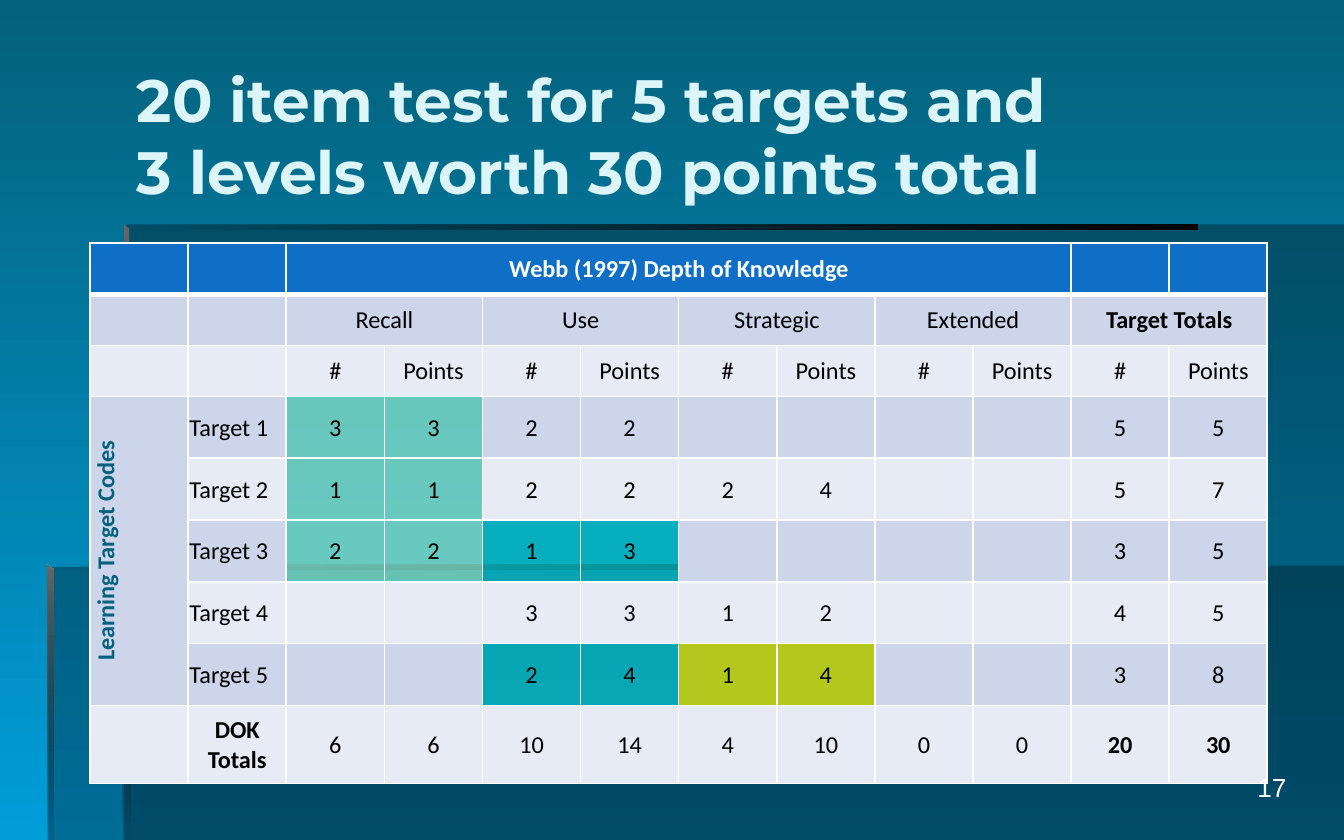
"""Build a test blueprint slide: a depth of knowledge table over stepped panels."""
import pptx
import pptx.dml.color
import pptx.enum.text
import pptx.oxml
import pptx.util
from pptx.util import Inches

RGBColor = pptx.dml.color.RGBColor
Align = pptx.enum.text.PP_ALIGN
Anchor = pptx.enum.text.MSO_ANCHOR

DEEP_TEAL = RGBColor(0x04, 0x61, 0x7B)
SKY = RGBColor(0x00, 0x9D, 0xD9)
ICE = RGBColor(0xDB, 0xF5, 0xF9)
BLACK = RGBColor(0x00, 0x00, 0x00)
GREY = RGBColor(0x66, 0x66, 0x66)
WHITE = RGBColor(0xFF, 0xFF, 0xFF)
HEADER_BLUE = RGBColor(0x0F, 0x6F, 0xC6)
BANDS = (RGBColor(0xE7, 0xEB, 0xF5), RGBColor(0xCC, 0xD5, 0xEA))
MINT = RGBColor(0x94, 0xF7, 0xDC)
TURQUOISE = RGBColor(0x0B, 0xD0, 0xD9)
YELLOW = RGBColor(0xFF, 0xFF, 0x00)

PANELS = [
    [(0.92, 4.21), (0.92, 6.25), (10, 6.25), (10, 4.21)],
    [(0.94, 4.22), (0.36, 4.22), (0.36, 6.25), (10, 6.25), (10, 1.67), (0.94, 1.67)],
]
EDGES = [
    ([(0.92, 1.67), (0.92, 1.71), (8.91, 1.71), (8.91, 1.67)], (BLACK, BLACK), (0, 100), 0),
    ([(0.92, 1.67), (0.92, 4.25), (0.97, 4.25), (0.96, 1.7)], (GREY, BLACK), (100, 100), 270),
    ([(0.91, 6.25), (0.97, 6.25), (0.96, 4.24), (0.91, 4.2)], (GREY, BLACK), (100, 0), 270),
    ([(0.35, 4.2), (0.35, 4.24), (5.35, 4.24), (5.35, 4.2)], (BLACK, BLACK), (0, 100), 0),
    ([(0.35, 4.2), (0.35, 6.25), (0.4, 6.25), (0.4, 4.24)], (GREY, BLACK), (100, 10), 270),
]
ROWS = [
    ["", "", "Webb (1997) Depth of Knowledge"] + [""] * 9,
    ["", "", "Recall", "", "Use", "", "Strategic", "", "Extended", "", "Target Totals", ""],
    ["", ""] + ["#", "Points"] * 5,
    ["Learning Target Codes", "Target 1", "3", "3", "2", "2", "", "", "", "", "5", "5"],
    ["", "Target 2", "1", "1", "2", "2", "2", "4", "", "", "5", "7"],
    ["", "Target 3", "2", "2", "1", "3", "", "", "", "", "3", "5"],
    ["", "Target 4", "", "", "3", "3", "1", "2", "", "", "4", "5"],
    ["", "Target 5", "", "", "2", "4", "1", "4", "", "", "3", "8"],
    ["", "DOK\nTotals", "6", "6", "10", "14", "4", "10", "0", "0", "20", "30"],
]
ROW_HEIGHTS = [0.38] * 3 + [0.46] * 5 + [0.58]
COLUMN_WIDTH = 0.73
MERGES = [((0, 2), (0, 9)), ((3, 0), (7, 0))]
MERGES += [((1, column), (1, column + 1)) for column in range(2, 12, 2)]
BOLD_TEXTS = {ROWS[0][2], "Target Totals", "Learning Target Codes", "DOK\nTotals", "20", "30"}
HIGHLIGHTED_PAIRS = {
    (3, 2): MINT, (4, 2): MINT, (5, 2): MINT,
    (5, 4): TURQUOISE, (7, 4): TURQUOISE, (7, 6): YELLOW,
}


def set_opacity(properties, *percentages):
    """Give the fill colours of an element their opacities."""
    colors = properties.xpath("./a:solidFill/a:srgbClr | ./a:gradFill//a:srgbClr")
    for color, percentage in zip(colors, percentages):
        alpha = color.makeelement(pptx.oxml.ns.qn("a:alpha"), {"val": str(percentage * 1000)})
        color.append(alpha)


def fill_gradient(fill, colors, angle):
    """Fill with a linear two-colour gradient."""
    fill.gradient()
    fill.gradient_angle = angle
    for stop, color in zip(fill.gradient_stops, colors):
        stop.color.rgb = color


def add_outline(slide, points):
    """Add a closed freeform without line or shadow."""
    corners = [(Inches(x), Inches(y)) for x, y in points]
    builder = slide.shapes.build_freeform(*corners[0], scale=1.0)
    builder.add_line_segments(corners[1:], close=True)
    shape = builder.convert_to_shape()
    shape.shadow.inherit = False
    shape.line.fill.background()
    return shape


def add_panel(slide, points):
    """Add a translucent dark panel."""
    shape = add_outline(slide, points)
    shape.fill.solid()
    shape.fill.fore_color.rgb = BLACK
    set_opacity(shape.element.spPr, 30)


def add_edge(slide, points, colors, opacities, angle):
    """Add a fading panel edge."""
    shape = add_outline(slide, points)
    fill_gradient(shape.fill, colors, angle)
    set_opacity(shape.element.spPr, *opacities)


def write_text(paragraph, text, size, font, color, bold=False, alignment=Align.LEFT):
    """Write text as runs, one for each line."""
    paragraph.alignment = alignment
    for index, line in enumerate(text.split("\n")):
        if index:
            paragraph.add_line_break()
        run = paragraph.add_run()
        run.text = line
        run.font.size = pptx.util.Pt(size)
        run.font.name = font
        run.font.bold = bold
        run.font.color.rgb = color


def add_text(slide, left, top, width, height, anchor, *style, **options):
    """Add a wrapping text box."""
    box = slide.shapes.add_textbox(Inches(left), Inches(top), Inches(width), Inches(height))
    box.text_frame.word_wrap = True
    box.text_frame.vertical_anchor = anchor
    write_text(box.text_frame.paragraphs[0], *style, **options)


def add_borders(cell, row):
    """Draw white cell borders, heavier under the header row."""
    widths = {"L": 1, "R": 1, "T": 3 if row == 1 else 1, "B": 3 if row == 0 else 1}
    properties = cell._tc.get_or_add_tcPr()
    for side, width in widths.items():
        properties.append(pptx.oxml.parse_xml(
            f'<a:ln{side} xmlns:a="http://schemas.openxmlformats.org/drawingml/2006/main" '
            f'w="{pptx.util.Pt(width)}"><a:solidFill><a:srgbClr val="{WHITE}"/></a:solidFill>'
            f'</a:ln{side}>'))


def format_cell(cell, row, column, text):
    """Set the borders, fill and text of one table cell."""
    add_borders(cell, row)
    cell.margin_left = cell.margin_top = cell.margin_right = Inches(0.01)
    cell.margin_bottom = 0
    cell.vertical_anchor = Anchor.MIDDLE
    highlight = HIGHLIGHTED_PAIRS.get((row, column - column % 2))
    cell.fill.solid()
    cell.fill.fore_color.rgb = highlight or (BANDS[row % 2] if row else HEADER_BLUE)
    properties = cell._tc.get_or_add_tcPr()
    if highlight:
        set_opacity(properties, 70)
    if not text:
        return
    color = BLACK if row else WHITE
    if column == 0:
        properties.set("vert", "vert270")
        color = DEEP_TEAL
    alignment = Align.LEFT if text.startswith("Target ") and column == 1 else Align.CENTER
    write_text(cell.text_frame.paragraphs[0], text, 13, "Calibri", color,
               text in BOLD_TEXTS, alignment)


def add_blueprint_table(slide):
    """Add the table of items and points by target and level."""
    count = len(ROWS[0])
    frame = slide.shapes.add_table(len(ROWS), count, Inches(0.67), Inches(1.81),
                                   Inches(COLUMN_WIDTH * count), Inches(sum(ROW_HEIGHTS)))
    table = frame.table
    table.horz_banding = table.first_row = False
    for column in table.columns:
        column.width = Inches(COLUMN_WIDTH)
    for row, height in zip(table.rows, ROW_HEIGHTS):
        row.height = Inches(height)
    for first, last in MERGES:
        table.cell(*first).merge(table.cell(*last))
    for row, texts in enumerate(ROWS):
        for column, text in enumerate(texts):
            format_cell(table.cell(row, column), row, column, text)


def main():
    """Build and save the slide."""
    presentation = pptx.Presentation()
    presentation.slide_width = Inches(10)
    presentation.slide_height = Inches(6.25)
    slide = presentation.slides.add_slide(presentation.slide_layouts[6])
    fill_gradient(slide.background.fill, (DEEP_TEAL, SKY), 270)
    for points in PANELS:
        add_panel(slide, points)
    for edge in EDGES:
        add_edge(slide, *edge)
    add_text(slide, 0.92, 0.35, 8, 1.3, Anchor.MIDDLE,
             "20 item test for 5 targets and\n3 levels worth 30 points total",
             32, "Montserrat", ICE, bold=True)
    add_blueprint_table(slide)
    add_text(slide, 7.59, 5.69, 2.08, 0.43, Anchor.TOP, "17", 14, "Arial", WHITE,
             alignment=Align.RIGHT)
    presentation.save("out.pptx")


if __name__ == "__main__":
    main()
